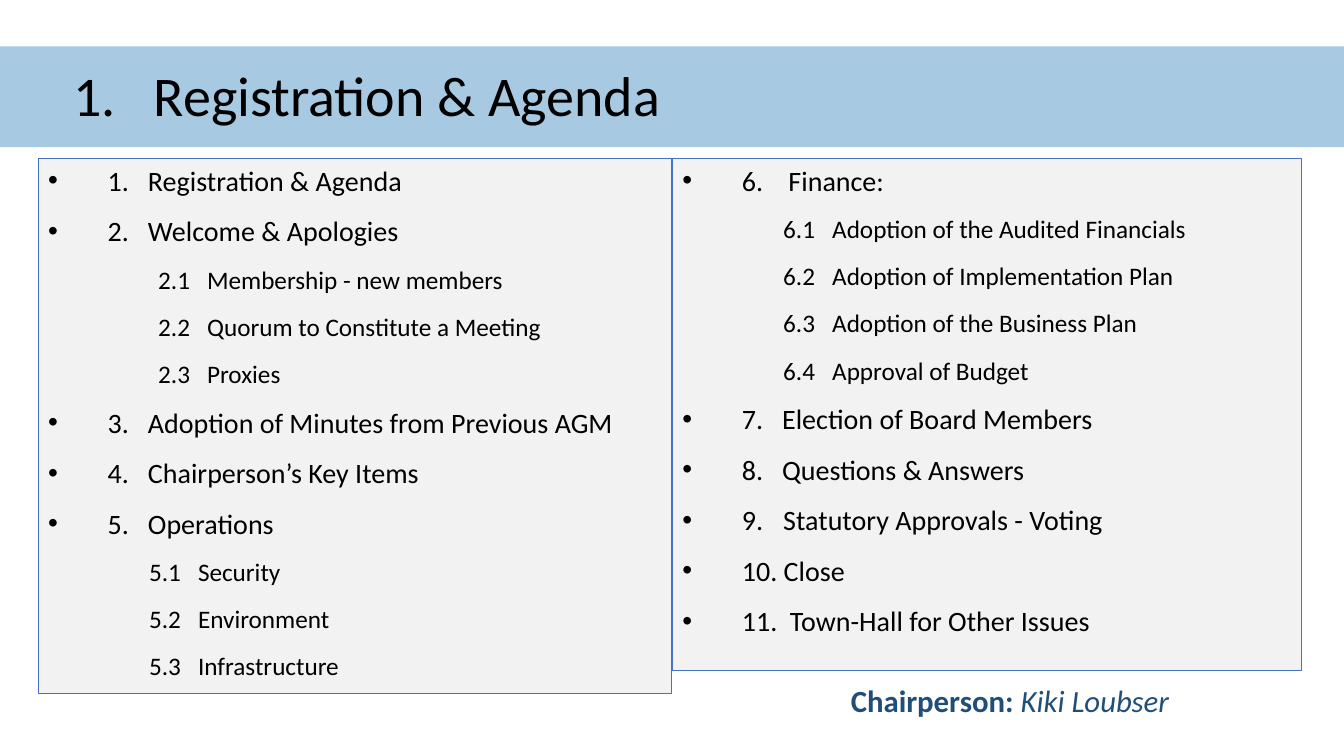
from lxml.etree import SubElement
from pptx import Presentation
from pptx.dml.color import RGBColor
from pptx.enum.shapes import MSO_SHAPE as Shape
from pptx.enum.text import MSO_ANCHOR as Anchor, PP_ALIGN as Align
from pptx.oxml.ns import qn
from pptx.util import Inches, Pt

BAND = RGBColor(0x3C, 0x8A, 0xC0)
PANEL = RGBColor(0xF2, 0xF2, 0xF2)
OUTLINE = RGBColor(0x44, 0x72, 0xC4)
BLACK = RGBColor(0, 0, 0)
NAVY = RGBColor(0x1F, 0x4E, 0x79)
FONT = "Calibri"
HANGING = 0.59

# Each agenda entry: heading, sub-items, indent of the sub-items
AGENDA_LEFT = [
    ("1.   Registration & Agenda", [], 0),
    ("2.   Welcome & Apologies", [
        "2.1   Membership - new members",
        "2.2   Quorum to Constitute a Meeting",
        "2.3   Proxies"], 1.09),
    ("3.   Adoption of Minutes from Previous AGM", [], 0),
    ("4.   Chairperson’s Key Items", [], 0),
    ("5.   Operations", [
        "5.1   Security",
        "5.2   Environment",
        "5.3   Infrastructure"], 1),
]
AGENDA_RIGHT = [
    ("6.    Finance:", [
        "6.1   Adoption of the Audited Financials",
        "6.2   Adoption of Implementation Plan",
        "6.3   Adoption of the Business Plan",
        "6.4   Approval of Budget"], 1),
    ("7.   Election of Board Members", [], 0),
    ("8.   Questions & Answers", [], 0),
    ("9.\tStatutory Approvals - Voting", [], 0),
    ("10. Close", [], 0),
    ("11.  Town-Hall for Other Issues", [], 0),
]


def write(paragraph, text, size, color=BLACK, bold=False, italic=False):
    run = paragraph.add_run()
    run.text = text
    font = run.font
    font.name, font.size = FONT, Pt(size)
    font.bold, font.italic = bold, italic
    font.color.rgb = color


def add_box(slide, left, top, width, height, fill):
    box = slide.shapes.add_shape(Shape.RECTANGLE, Inches(left), Inches(top),
                                 Inches(width), Inches(height))
    box.shadow.inherit = False
    box.fill.solid()
    box.fill.fore_color.rgb = fill
    return box


def indent(paragraph, margin, bullet):
    props = paragraph._p.get_or_add_pPr()
    props.set("marL", str(Inches(margin)))
    props.set("indent", str(Inches(-margin if bullet else 0)))
    if bullet:
        SubElement(props, qn("a:buFont"), typeface="Arial")
        SubElement(props, qn("a:buChar"), char="•")
    else:
        SubElement(props, qn("a:buNone"))


def add_title(slide, left, top, width, height):
    # Translucent band across the slide
    band = add_box(slide, left, top, width, height, BAND)
    band.line.fill.background()
    color = band.fill._xPr.find(".//" + qn("a:srgbClr"))
    SubElement(color, qn("a:alpha"), val="45000")

    # Heading on the band
    heading = slide.shapes.add_textbox(Inches(left + 0.63), Inches(top + 0.06),
                                       Inches(11.5), Inches(height - 0.09))
    frame = heading.text_frame
    frame.word_wrap = True
    frame.vertical_anchor = Anchor.MIDDLE
    frame.paragraphs[0].line_spacing = 0.9
    write(frame.paragraphs[0], "1.   Registration & Agenda", 40)


def add_agenda(slide, left, top, width, height, agenda):
    panel = add_box(slide, left, top, width, height, PANEL)
    panel.line.color.rgb = OUTLINE
    panel.line.width = Pt(0.75)
    frame = panel.text_frame
    frame.word_wrap = True
    frame.vertical_anchor = Anchor.TOP

    # Flatten headings and sub-items into lines
    lines = []
    for heading, items, margin in agenda:
        lines.append((heading, 20, HANGING, True))
        lines += [(item, 18, margin, False) for item in items]

    for number, (text, size, margin, bullet) in enumerate(lines):
        paragraph = frame.add_paragraph() if number else frame.paragraphs[0]
        indent(paragraph, margin, bullet)
        paragraph.alignment = Align.LEFT
        paragraph.space_before = Pt(6 if number else 0)
        paragraph.space_after = Pt(6)
        write(paragraph, text, size)


def add_chairperson(slide, left, top, width, height):
    label = slide.shapes.add_textbox(Inches(left), Inches(top),
                                     Inches(width), Inches(height))
    label.text_frame.word_wrap = False
    paragraph = label.text_frame.paragraphs[0]
    paragraph.line_spacing = 1.5
    write(paragraph, "Chairperson: ", 22, color=NAVY, bold=True)
    write(paragraph, "Kiki Loubser", 22, color=NAVY, italic=True)


def main():
    deck = Presentation()
    deck.slide_width, deck.slide_height = Inches(13.33), Inches(7.5)
    slide = deck.slides.add_slide(deck.slide_layouts[6])
    add_title(slide, 0, 0.46, 13.33, 1)
    add_agenda(slide, 0.38, 1.57, 6.28, 5.31, AGENDA_LEFT)
    add_chairperson(slide, 8.34, 6.53, 3.39, 0.6)
    add_agenda(slide, 6.67, 1.57, 6.24, 5.08, AGENDA_RIGHT)
    deck.save("out.pptx")


if __name__ == "__main__":
    main()
